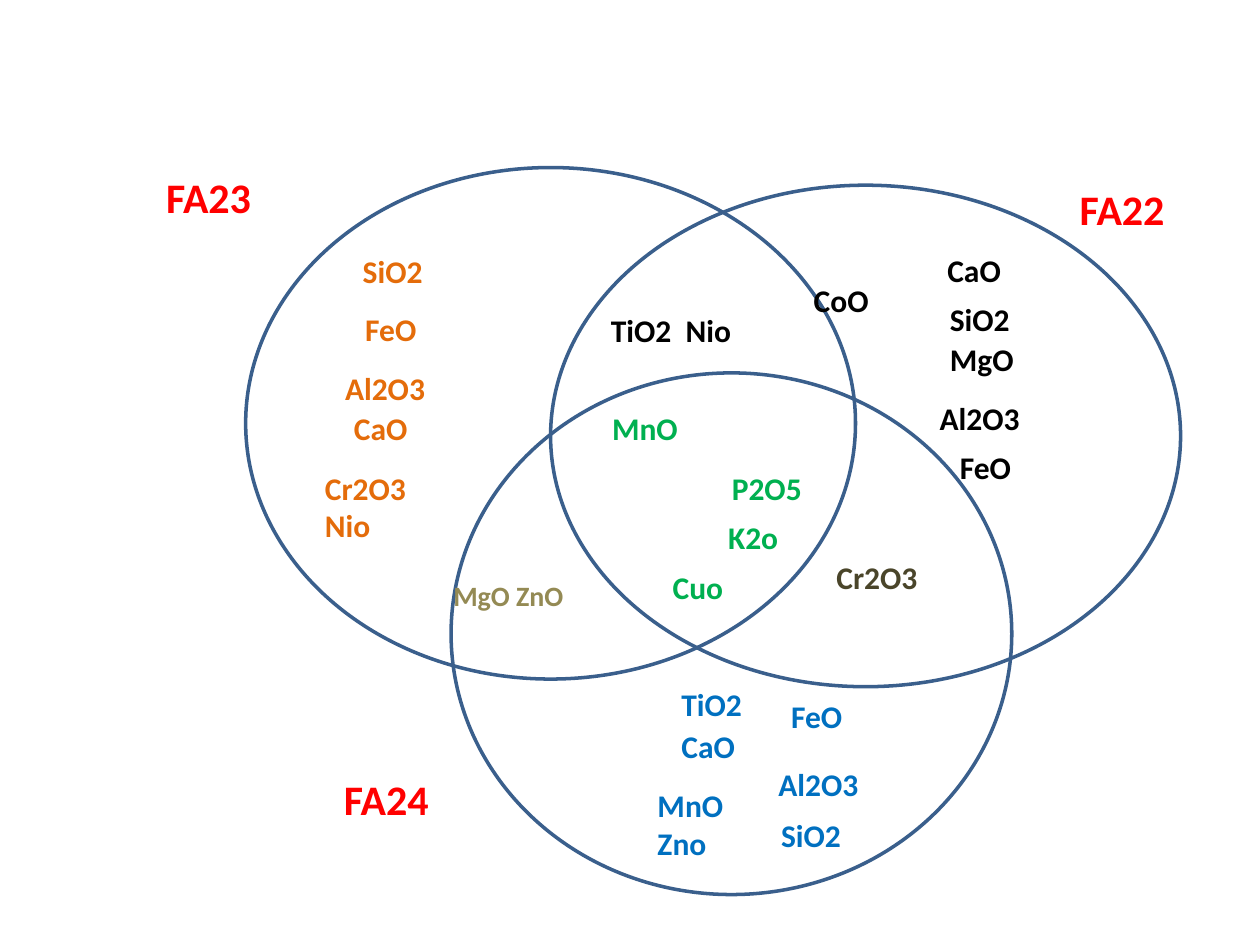
from pptx import Presentation
from pptx.dml.color import RGBColor
from pptx.enum import shapes, text
from pptx.util import Inches, Pt

COLORS = {
    "ring": "3A5F8C", "title": "FF0000", "black": "000000",
    "olive": "4A452A", "tan": "948A54", "orange": "E46C0A",
    "blue": "0070C0", "green": "00B050",
}

# left, top, width, height
RINGS = [
    (4.37, 1.47, 5, 3.98),
    (1.95, 1.33, 4.84, 4.06),
    (3.58, 2.96, 4.45, 4.14),
]

# (color, size): words, left, top, width
LABELS = {
    ("title", 24): [
        ("FA22", 8.47, 1.41, 1.01),
        ("FA23", 1.22, 1.31, 1.01),
        ("FA24", 2.63, 6.09, 1.01),
    ],
    ("black", 18): [
        ("CaO", 7.42, 1.94, 0.72),
        ("SiO2", 7.44, 2.33, 0.78),
        ("MgO", 7.44, 2.65, 0.76),
        ("Al2O3", 7.36, 3.12, 0.93),
        ("FeO", 7.52, 3.51, 0.69),
        ("TiO2  Nio", 4.75, 2.42, 1.39),
        ("CoO", 6.36, 2.18, 0.73),
    ],
    ("olive", 18): [("Cr2O3", 6.54, 4.38, 0.96)],
    ("tan", 16): [("MgO ZnO", 3.5, 4.54, 1.26)],
    ("orange", 18): [
        ("SiO2", 2.78, 1.95, 0.78),
        ("FeO", 2.8, 2.41, 0.61),
        ("Al2O3", 2.64, 2.88, 0.84),
        ("CaO", 2.71, 3.2, 0.65),
        ("Cr2O3\nNio", 2.48, 3.67, 1.01),
    ],
    ("blue", 18): [
        ("TiO2", 5.31, 5.39, 0.76),
        ("CaO", 5.31, 5.72, 0.65),
        ("MnO\nZno", 5.12, 6.19, 0.76),
        ("FeO", 6.18, 5.48, 0.61),
        ("Al2O3", 6.08, 6.02, 0.84),
        ("SiO2", 6.1, 6.43, 0.68),
    ],
    ("green", 18): [
        ("MnO", 4.76, 3.2, 0.73),
        ("P2O5", 5.71, 3.67, 0.76),
        ("K2o", 5.68, 4.06, 0.68),
        ("Cuo", 5.24, 4.46, 0.69),
    ],
}


def color(name):
    return RGBColor.from_string(COLORS[name])


def add_ring(slide, box):
    ring = slide.shapes.add_shape(shapes.MSO_SHAPE.OVAL, *map(Inches, box))
    ring.shadow.inherit = False
    ring.fill.background()
    ring.line.color.rgb = color("ring")
    ring.line.width = Pt(2)


def add_label(slide, words, left, top, width, tint, size):
    """Add bold text, one paragraph per line, in a box as tall as its lines."""
    lines = words.split("\n")
    high = 0.1 + len(lines) * size / 60
    box = slide.shapes.add_textbox(*map(Inches, (left, top, width, high)))
    frame = box.text_frame
    frame.word_wrap = False
    frame.auto_size = text.MSO_AUTO_SIZE.SHAPE_TO_FIT_TEXT
    frame.text = words
    form = {"name": "Calibri", "size": Pt(size), "bold": True}
    for para in frame.paragraphs:
        font = para.runs[0].font
        for key, value in form.items():
            setattr(font, key, value)
        font.color.rgb = color(tint)


def main():
    deck = Presentation()
    deck.slide_width, deck.slide_height = Inches(10), Inches(7.5)
    slide = deck.slides.add_slide(deck.slide_layouts[6])
    for box in RINGS:
        add_ring(slide, box)
    for (tint, size), group in LABELS.items():
        for label in group:
            add_label(slide, *label, tint, size)
    deck.save("out.pptx")


if __name__ == "__main__":
    main()
